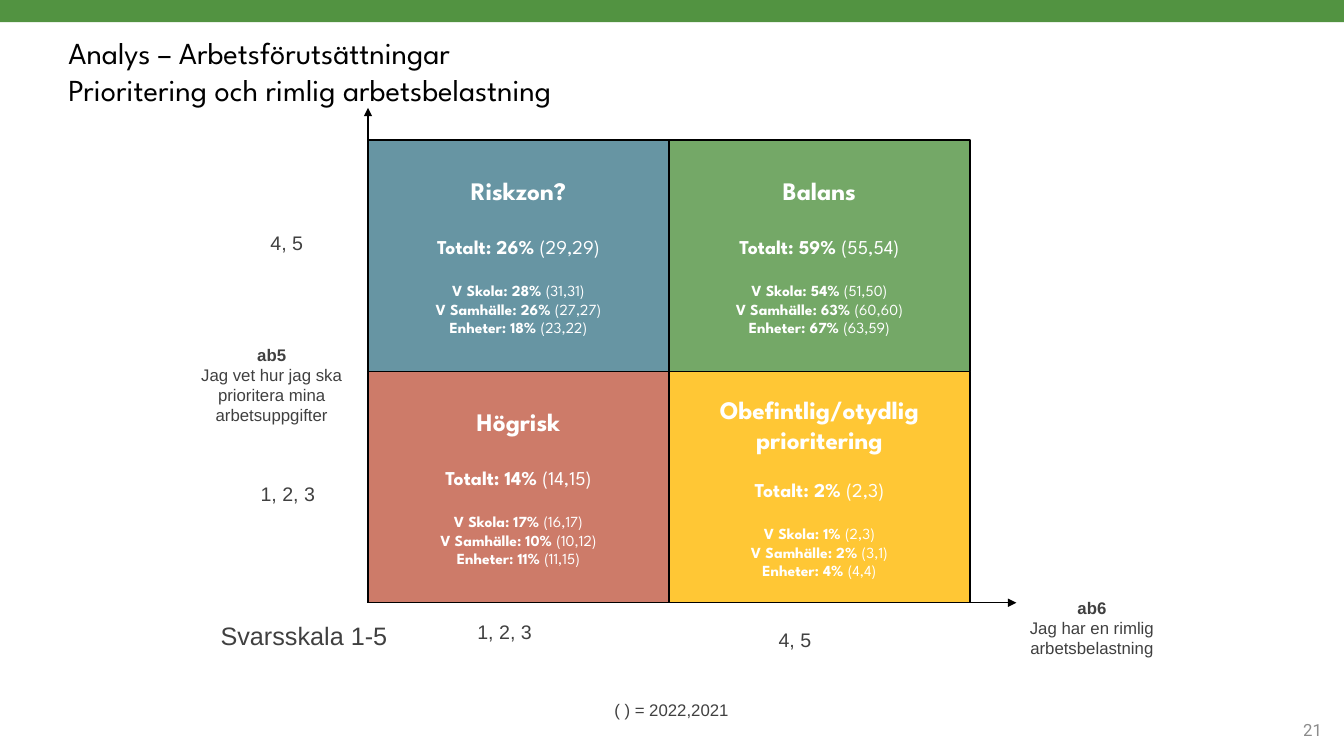
from dataclasses import dataclass

from lxml.etree import SubElement
from pptx import Presentation
from pptx.dml.color import RGBColor
from pptx.enum.shapes import MSO_CONNECTOR as Connector, MSO_SHAPE as Shape
from pptx.enum.text import MSO_ANCHOR as Anchor, PP_ALIGN as Align
from pptx.oxml.ns import qn
from pptx.util import Inches, Pt


@dataclass(frozen=True)
class Theme:
    display: str = "League Spartan"
    body: str = "Arial"
    number: str = "Roboto"
    black: str = "000000"
    white: str = "FFFFFF"
    gray: str = "404040"
    pale: str = "8C8C8C"
    green: str = "529341"
    blue: str = "417B8D"
    red: str = "C15A44"
    yellow: str = "FFBA03"
    opacity: int = 80000
    title: float = 21.8
    heading: float = 18
    total: float = 14
    detail: float = 11
    caption: float = 12
    line: float = 1


THEME = Theme()
DIVISIONS = ("V Skola", "V Samhälle", "Enheter")
QUADRANTS = [
    (0, 0, THEME.blue, ["Riskzon?"], 21,
     [("26%", "(29,29)"), ("28%", "(31,31)"), ("26%", "(27,27)"), ("18%", "(23,22)")]),
    (1, 0, THEME.green, ["Balans"], 21,
     [("59%", "(55,54)"), ("54%", "(51,50)"), ("63%", "(60,60)"), ("67%", "(63,59)")]),
    (0, 1, THEME.red, ["Högrisk"], 21,
     [("14%", "(14,15)"), ("17%", "(16,17)"), ("10%", "(10,12)"), ("11%", "(11,15)")]),
    (1, 1, THEME.yellow, ["Obefintlig/otydlig", "prioritering"], 16.5,
     [("2%", "(2,3)"), ("1%", "(2,3)"), ("2%", "(3,1)"), ("4%", "(4,4)")]),
]


def style(font, name, size, color, bold=False):
    font.name = name
    font.size = Pt(size)
    font.bold = bold
    font.color.rgb = RGBColor.from_string(color)


def add_rect(page, left, top, width, height, color):
    rect = page.shapes.add_shape(
        Shape.RECTANGLE, Inches(left), Inches(top), Inches(width), Inches(height))
    rect.shadow.inherit = False
    rect.fill.solid()
    rect.fill.fore_color.rgb = RGBColor.from_string(color)
    rect.line.fill.background()
    return rect


def add_label(page, box, lines, size, font=THEME.body, color=THEME.gray,
              align=Align.CENTER, wrap=False, bold_first=False, anchor=Anchor.TOP):
    label = page.shapes.add_textbox(*map(Inches, box))
    frame = label.text_frame
    frame.word_wrap = wrap
    frame.vertical_anchor = anchor
    for index, line in enumerate(lines):
        para = frame.paragraphs[0] if index == 0 else frame.add_paragraph()
        para.text = line
        para.alignment = align
        for span in para.runs:
            style(span.font, font, size, color, bold_first and index == 0)


def add_quadrant(page, box, color, heading, gap, figures):
    rect = add_rect(page, *box, color)
    fill = rect.fill._xPr.find(qn("a:solidFill"))
    SubElement(fill[0], qn("a:alpha"), val=str(THEME.opacity))
    rect.line.color.rgb = RGBColor.from_string(THEME.black)
    rect.line.width = Pt(THEME.line)
    frame = rect.text_frame
    frame.word_wrap = False
    frame.vertical_anchor = Anchor.MIDDLE
    rows = [(text, "", THEME.heading, 0) for text in heading]
    for index, (name, (share, earlier)) in enumerate(zip(("Totalt", *DIVISIONS), figures)):
        size = THEME.total if index == 0 else THEME.detail
        space = {0: gap, 1: 16.5}.get(index, 0)
        rows.append((f"{name}: {share} ", earlier, size, space))
    for index, (strong, light, size, space) in enumerate(rows):
        para = frame.paragraphs[0] if index == 0 else frame.add_paragraph()
        para.alignment = Align.CENTER
        para.space_before = Pt(space)
        for text, bold in ((strong, True), (light, False)):
            if text:
                span = para.add_run()
                span.text = text
                style(span.font, THEME.display, size, THEME.white, bold)


def add_axis(page, start, end):
    axis = page.shapes.add_connector(Connector.STRAIGHT, *map(Inches, start + end))
    axis.line.color.rgb = RGBColor.from_string(THEME.black)
    axis.line.width = Pt(THEME.line)
    SubElement(axis.line._get_or_add_ln(), qn("a:tailEnd"), type="triangle")
    SubElement(axis._element.spPr, qn("a:effectLst"))


def add_header(page, left, top, width):
    add_rect(page, 0, 0, 13.33, 0.22, THEME.green)
    title = "Analys – Arbetsförutsättningar\vPrioritering och rimlig arbetsbelastning"
    add_label(page, (left, top, width, 0.5), [title], THEME.title,
              THEME.display, THEME.black, Align.LEFT, wrap=True)


def add_matrix(page, left, top, width, height):
    cell_width, cell_height = width / 2, height / 2
    right, bottom = left + width, top + height
    for column, row, color, heading, gap, figures in QUADRANTS:
        box = (left + column * cell_width, top + row * cell_height, cell_width, cell_height)
        add_quadrant(page, box, color, heading, gap, figures)
    add_axis(page, (left, bottom), (left, top - 0.32))
    add_axis(page, (left, bottom), (right + 0.46, bottom))

    add_label(page, (left - 1.97, top + 1.98, 2.03, 0.91),
              ["ab5", "Jag vet hur jag ska prioritera mina arbetsuppgifter"],
              THEME.caption, wrap=True, bold_first=True)
    add_label(page, (right + 0.17, bottom - 0.1, 2.08, 0.71),
              ["ab6", "Jag har en rimlig arbetsbelastning"],
              THEME.caption, wrap=True, bold_first=True)
    for x, y, text, label_width in (
            (left + 0.98, bottom + 0.12, "1, 2, 3", 0.75),
            (left - 1.17, top + 3.34, "1, 2, 3", 0.75),
            (left + 3.97, bottom + 0.2, "4, 5", 0.53),
            (left - 1.07, top + 0.85, "4, 5", 0.53)):
        add_label(page, (x, y, label_width, 0.34), [text], THEME.total)
    add_label(page, (left - 1.57, bottom + 0.12, 1.87, 0.4),
              ["Svarsskala 1-5"], THEME.heading)


def add_footer(page, left, top):
    add_label(page, (left, top, 1.34, 0.3), ["( ) = 2022,2021"], THEME.caption)
    add_label(page, (left + 6.5, top + 0.15, 0.72, 0.4), ["21"], THEME.caption,
              THEME.number, THEME.pale, Align.RIGHT, wrap=True, anchor=Anchor.MIDDLE)


def main():
    deck = Presentation()
    deck.slide_width, deck.slide_height = Inches(13.33), Inches(7.5)
    page = deck.slides.add_slide(deck.slide_layouts[6])
    add_header(page, 0.58, 0.29, 11)
    add_matrix(page, 3.65, 1.39, 5.97, 4.59)
    add_footer(page, 5.99, 6.89)
    deck.save("out.pptx")


if __name__ == "__main__":
    main()
